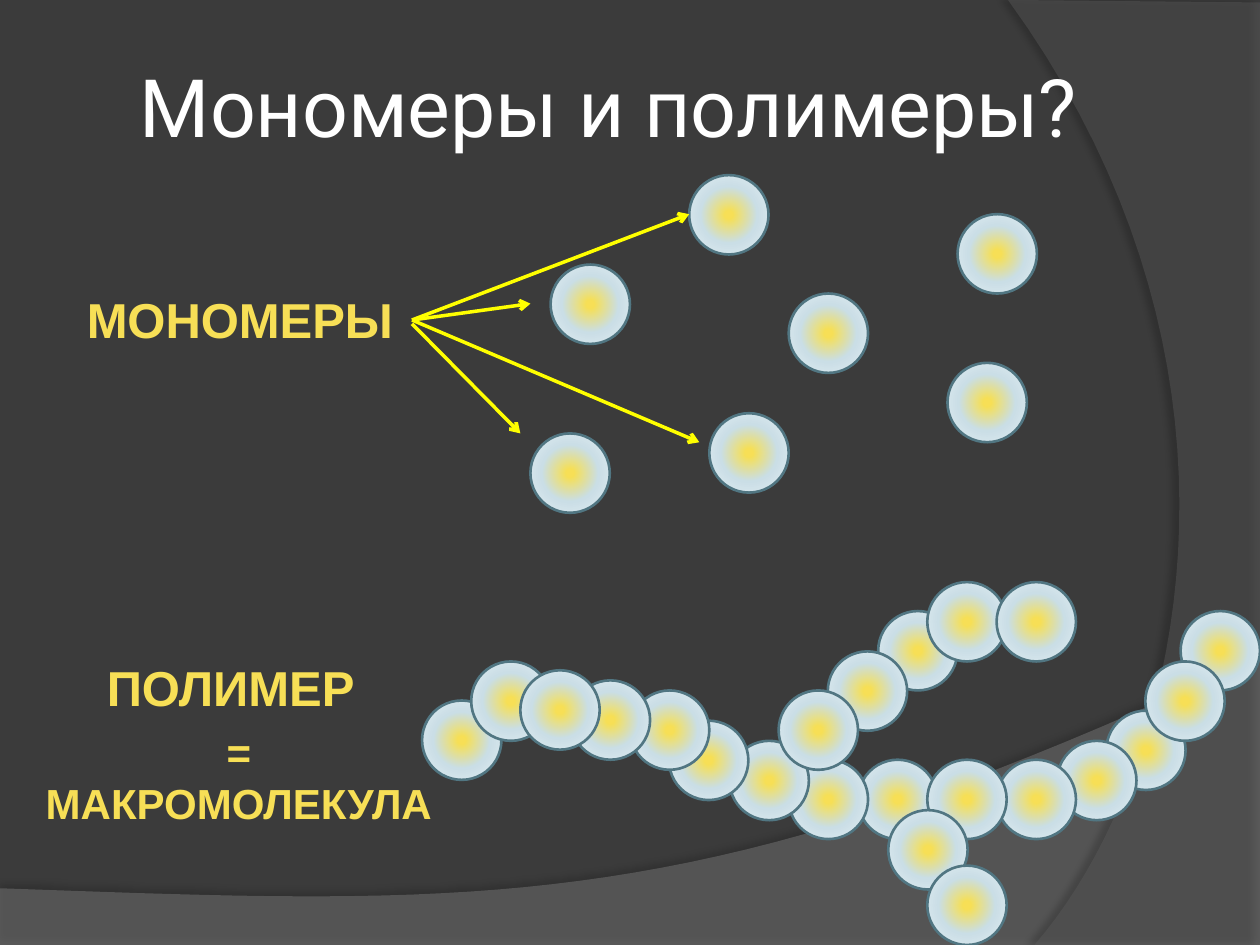
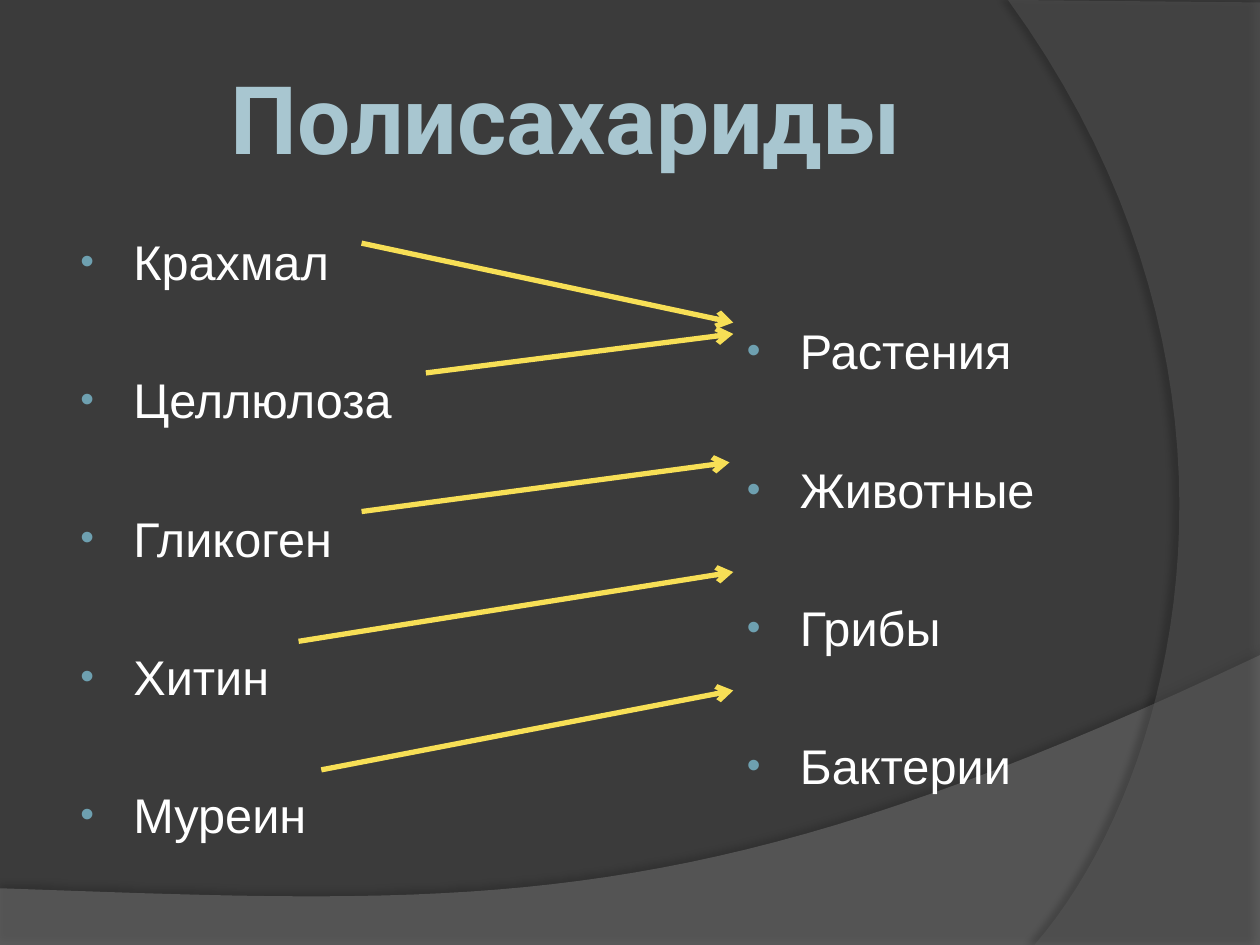
"""Build two slides about monomers, polymers and polysaccharides."""
from dataclasses import dataclass

from lxml import etree
from pptx import Presentation
from pptx.dml.color import RGBColor
from pptx.enum.shapes import MSO_CONNECTOR, MSO_SHAPE
from pptx.enum.text import MSO_ANCHOR, MSO_AUTO_SIZE, PP_ALIGN
from pptx.oxml import parse_xml
from pptx.oxml.ns import nsdecls, qn
from pptx.util import Inches, Pt

STRAIGHT = MSO_CONNECTOR.STRAIGHT
OVAL = MSO_SHAPE.OVAL
MIDDLE = MSO_ANCHOR.MIDDLE
NO_FIT = MSO_AUTO_SIZE.NONE
LEFT, CENTER = PP_ALIGN.LEFT, PP_ALIGN.CENTER


@dataclass(frozen=True)
class Theme:
    """Colours, fonts and type sizes of the presentation."""

    background: str = "3B3B3B"
    lower_band: str = "7F7F7F"
    right_band: str = "5E5E5E"
    shadow: str = "000000"
    white: str = "FFFFFF"
    pale_blue: str = "A8C6D0"
    bullet: str = "6EA0B0"
    yellow: str = "F7DF56"
    bright_yellow: str = "FFFF00"
    ball_line: str = "517682"
    ball_stops: tuple = ((7, "F7DF56"), (50, "CADEE6"), (100, "E5EEF2"))
    title_font: str = "Roboto"
    body_font: str = "Arial"
    title_size: float = 46
    big_title_size: float = 54
    label_size: float = 28
    small_label_size: float = 24
    list_size: float = 27.8
    list_gap: float = 45.7


THEME = Theme()
BALL = 0.63

MONOMERS = [(4.21, 3.44), (7.6, 1.7), (5.47, 1.39), (7.52, 2.88),
            (5.63, 3.28), (4.37, 2.1), (6.26, 2.33)]
CHAIN = [
    (6.81, 6.03), (6.26, 6.03), (5.79, 5.88), (5.31, 5.72), (5, 5.48),
    (8.78, 5.64), (8.39, 5.88), (7.91, 6.03), (7.36, 6.03),
    (7.05, 6.43), (7.36, 6.87),
    (6.97, 4.85), (6.57, 5.17), (6.18, 5.48),
    (9.37, 4.85), (9.09, 5.25),
    (4.53, 5.4), (3.35, 5.56), (3.74, 5.25), (4.13, 5.32),
    (7.36, 4.62), (7.91, 4.62),
]
MONOMER_ARROWS = [((3.27, 2.54), (4.21, 2.41)), ((3.27, 2.57), (4.13, 3.44)),
                  ((3.27, 2.54), (5.55, 3.51)), ((3.27, 2.54), (5.47, 1.7))]

POLYSACCHARIDES = ["Крахмал", "Целлюлоза", "Гликоген", "Хитин", "Муреин"]
ORGANISMS = ["Растения", "Животные", "Грибы", "Бактерии"]
SOURCE_ARROWS = [((2.87, 1.93), (5.82, 2.56)), ((3.38, 2.96), (5.82, 2.65)),
                 ((2.87, 4.06), (5.79, 3.67)), ((2.37, 5.09), (5.82, 4.54)),
                 ((2.55, 6.11), (5.82, 5.48))]


def rgb(color):
    """Return a colour object for a hex string."""
    return RGBColor.from_string(color)


def apply(obj, formats):
    """Set each attribute named in formats."""
    for name, value in formats.items():
        setattr(obj, name, value)


def place(sp, box):
    """Move and size a shape to a box in inches."""
    apply(sp, dict(zip(("left", "top", "width", "height"), map(Inches, box))))


def add_run(p, text, size, color, font=THEME.body_font, bold=False):
    """Add a formatted run to a paragraph."""
    r = p.add_run()
    r.text = text
    apply(r.font, {"name": font, "size": Pt(size), "bold": bold})
    r.font.color.rgb = rgb(color)


def curve(start, c1, c2, end, steps=40):
    """Return points along a cubic Bezier curve."""
    points = []
    for i in range(steps + 1):
        t = i / steps
        u = 1 - t
        weights = (u ** 3, 3 * u * u * t, 3 * u * t * t, t ** 3)
        points.append(tuple(
            sum(w * pt[axis] for w, pt in zip(weights, (start, c1, c2, end)))
            for axis in (0, 1)))
    return points


def add_band(s, points, color, opacity, shadow_opacity, distance, direction):
    """Add a translucent band with a soft shadow."""
    first, *rest = [(Inches(x), Inches(y)) for x, y in points]
    builder = s.shapes.build_freeform(*first, scale=1.0)
    builder.add_line_segments(rest, close=True)
    sp = builder.convert_to_shape()
    sp.shadow.inherit = False
    sp.fill.solid()
    sp.fill.fore_color.rgb = rgb(color)
    sp.line.fill.background()
    sp_pr = sp.element.spPr
    etree.SubElement(sp_pr.find(".//" + qn("a:srgbClr")), qn("a:alpha"),
                     val=str(opacity * 1000))
    sp_pr.find(qn("a:effectLst")).append(parse_xml(
        f'<a:outerShdw {nsdecls("a")} blurRad="{Pt(4)}" dist="{Pt(distance)}" '
        f'dir="{direction * 60000}" algn="ctr" rotWithShape="0">'
        f'<a:srgbClr val="{THEME.shadow}">'
        f'<a:alpha val="{shadow_opacity * 1000}"/></a:srgbClr></a:outerShdw>'))
    return sp


def style_layout(layout, s):
    """Give the layout its background and two bands, drawn by way of a slide."""
    fill = layout.background.fill
    fill.solid()
    fill.fore_color.rgb = rgb(THEME.background)
    lower = [(0, 7.5), (10, 7.5)] + curve(
        (10, 5.2), (5.59, 7.29), (3.91, 7.19), (0, 7.05))
    right = [(10, 0.02), (10, 7.5)] + curve(
        (8.21, 7.5), (9.35, 6.19), (10.18, 3), (8, 0))
    bands = [add_band(s, lower, THEME.lower_band, 45, 35, 3.5, 270),
             add_band(s, right, THEME.right_band, 40, 45, 4, 180)]
    for i, sp in enumerate(bands):
        sp.element.nvSpPr.cNvPr.set("id", str(20 + i))
        layout.shapes.element.insert(2 + i, sp.element)


def set_title(s, text, box, size, color, align, bold=False):
    """Move, fill and format the title placeholder."""
    title = s.shapes.title
    place(title, box)
    tf = title.text_frame
    margins = ("margin_left", "margin_top", "margin_right", "margin_bottom")
    apply(tf, dict.fromkeys(margins, Inches(0.05)))
    apply(tf, {"vertical_anchor": MIDDLE, "auto_size": NO_FIT,
               "word_wrap": True})
    p = tf.paragraphs[0]
    p.alignment = align
    add_run(p, text, size, color, THEME.title_font, bold)


def add_paragraphs(s, box, lines, size, color, align=LEFT, bold=False):
    """Add a wrapped text box and return its paragraphs."""
    tf = s.shapes.add_textbox(*map(Inches, box)).text_frame
    tf.word_wrap = True
    for i, line in enumerate(lines):
        p = tf.add_paragraph() if i else tf.paragraphs[0]
        p.alignment = align
        add_run(p, line, size, color, bold=bold)
    return tf.paragraphs


def add_label(s, box, lines, size=THEME.label_size, align=LEFT):
    """Add a bold yellow label."""
    add_paragraphs(s, box, lines, size, THEME.yellow, align, bold=True)


def add_bullets(s, box, items):
    """Add a widely spaced bulleted list."""
    for p in add_paragraphs(s, box, items, THEME.list_size, THEME.white):
        p.space_after = Pt(THEME.list_gap)
        p_pr = p._p.get_or_add_pPr()
        p_pr.set("marL", str(Inches(0.46)))
        p_pr.set("indent", str(Inches(-0.42)))
        color = etree.SubElement(p_pr, qn("a:buClr"))
        etree.SubElement(color, qn("a:srgbClr"), val=THEME.bullet)
        etree.SubElement(p_pr, qn("a:buSzPct"), val="80000")
        etree.SubElement(p_pr, qn("a:buFont"), typeface=THEME.body_font)
        etree.SubElement(p_pr, qn("a:buChar"), char="•")


def add_ball(s, x, y):
    """Add one monomer ball with a radial gradient."""
    sp = s.shapes.add_shape(OVAL, *map(Inches, (x, y, BALL, BALL)))
    sp.shadow.inherit = False
    sp.line.color.rgb = rgb(THEME.ball_line)
    sp.line.width = Pt(1.5)
    sp.fill.background()
    stops = "".join(
        f'<a:gs pos="{pos * 1000}"><a:srgbClr val="{color}"/></a:gs>'
        for pos, color in THEME.ball_stops)
    sp_pr = sp.element.spPr
    sp_pr.replace(sp_pr.find(qn("a:noFill")), parse_xml(
        f'<a:gradFill {nsdecls("a")} rotWithShape="1"><a:gsLst>{stops}</a:gsLst>'
        '<a:path path="circle"><a:fillToRect l="50000" t="50000" r="50000" '
        'b="50000"/></a:path></a:gradFill>'))


def add_arrow(s, start, end, color, width):
    """Add a straight line with an open arrowhead at its end."""
    line = s.shapes.add_connector(STRAIGHT, *map(Inches, start + end))
    line.line.color.rgb = rgb(color)
    line.line.width = Pt(width)
    sp_pr = line.element.spPr
    etree.SubElement(sp_pr.find(qn("a:ln")), qn("a:tailEnd"), type="arrow")
    etree.SubElement(sp_pr, qn("a:effectLst"))


def build_polymers(s):
    """Fill the slide on monomers and polymers."""
    set_title(s, "Мономеры и полимеры?", (1.06, 0.21, 8.17, 1.25),
              THEME.title_size, THEME.white, LEFT)
    for x, y in MONOMERS + CHAIN:
        add_ball(s, x, y)
    add_label(s, (0.59, 2.25, 2.68, 0.57), ["МОНОМЕРЫ"])
    add_label(s, (0.75, 5.17, 2.2, 0.57), ["ПОЛИМЕР"])
    add_label(s, (0.2, 5.72, 3.39, 0.91), ["=", "МАКРОМОЛЕКУЛА"],
              THEME.small_label_size, CENTER)
    for start, end in MONOMER_ARROWS:
        add_arrow(s, start, end, THEME.bright_yellow, 2)


def build_polysaccharides(s):
    """Fill the slide on polysaccharides and where they occur."""
    set_title(s, "Полисахариды ", (0.5, 0.3, 8.17, 1.25),
              THEME.big_title_size, THEME.pale_blue, CENTER, bold=True)
    add_bullets(s, (0.5, 1.79, 2.93, 4.95), POLYSACCHARIDES)
    add_bullets(s, (5.79, 2.5, 2.93, 3.87), ORGANISMS)
    for start, end in SOURCE_ARROWS:
        add_arrow(s, start, end, THEME.yellow, 3)


def main():
    """Build and save the presentation."""
    prs = Presentation()
    apply(prs, {"slide_width": Inches(10), "slide_height": Inches(7.5)})
    layout = prs.slide_layouts[5]
    polymers, polysaccharides = (prs.slides.add_slide(layout) for _ in range(2))
    style_layout(layout, polymers)
    build_polymers(polymers)
    build_polysaccharides(polysaccharides)
    prs.save("out.pptx")


if __name__ == "__main__":
    main()
